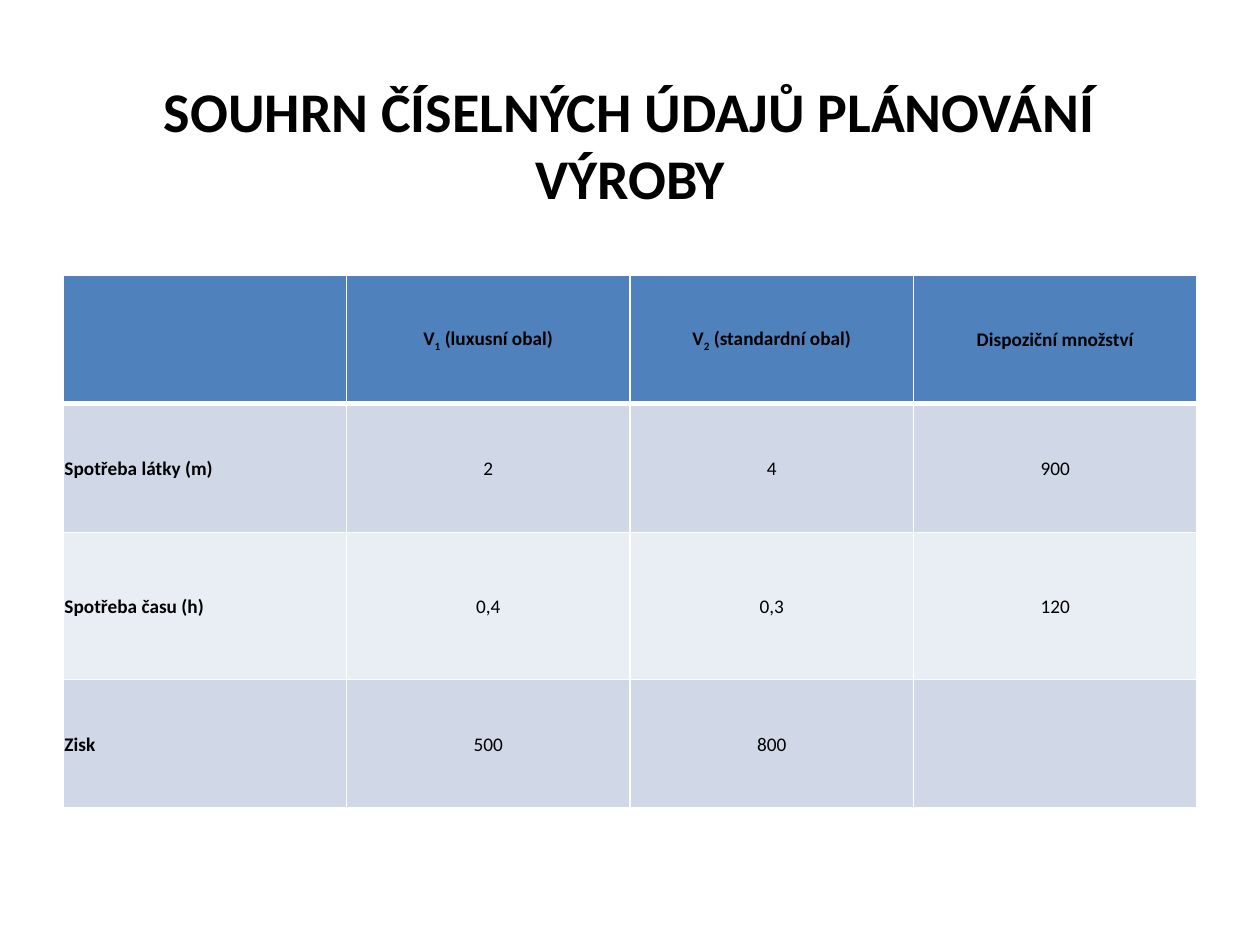
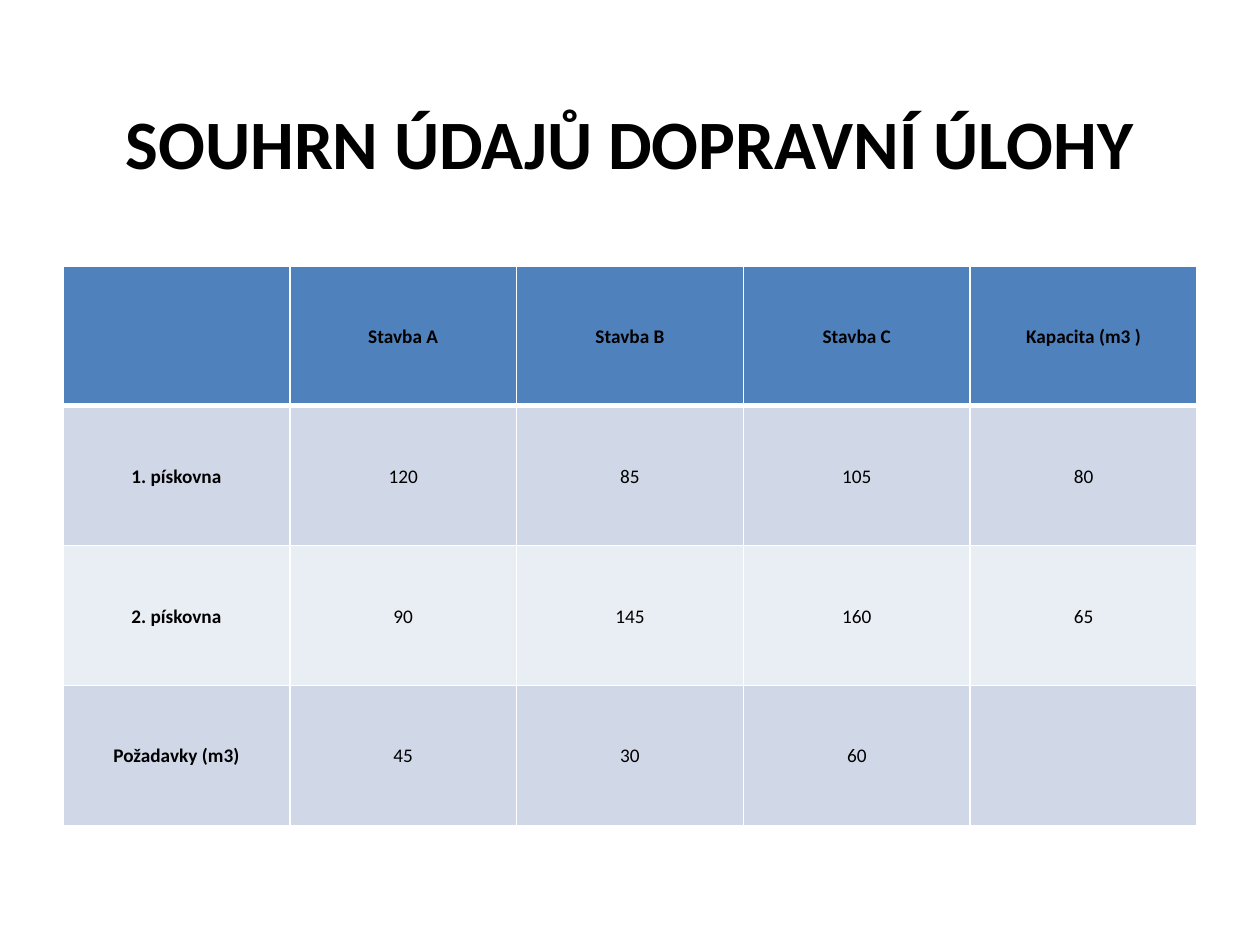
from dataclasses import dataclass
from lxml.etree import SubElement
from pptx import Presentation
from pptx.dml.color import RGBColor
from pptx.enum.text import MSO_ANCHOR, PP_ALIGN
from pptx.oxml.ns import qn
from pptx.util import Cm, Pt


@dataclass(frozen=True)
class Theme:
    font: str = "Calibri"
    ink: str = "000000"
    rule: str = "FFFFFF"
    head: str = "4F81BD"
    bands: tuple = ("D0D8E8", "E9EDF4")
    body: float = 11
    thin: float = 1
    thick: float = 3
    left: float = 1.27
    width: float = 22.86


THEME = Theme()

PLAN = [
    ["", ["V", "1", " (luxusní obal)"], ["V", "2", " (standardní obal)"],
     "Dispoziční množství"],
    ["Spotřeba látky (m)", "2", "4", "900"],
    ["Spotřeba času (h)", "0,4", "0,3", "120"],
    ["Zisk", "500", "800", ""],
]

FREIGHT = [
    ["", "Stavba A", "Stavba B", "Stavba C", "Kapacita (m3 )"],
    ["1. pískovna", "120", "85", "105", "80"],
    ["2. pískovna", "90", "145", "160", "65"],
    ["Požadavky (m3)", "45", "30", "60", ""],
]


def assign(item, values):
    for name, value in values.items():
        setattr(item, name, value)


def write(frame, parts, size, bold, align):
    line = frame.paragraphs[0]
    line.alignment = align
    for place, part in enumerate(parts):
        run = line.add_run()
        run.text = part
        assign(run.font, {"name": THEME.font, "size": Pt(size), "bold": bold})
        run.font.color.rgb = RGBColor.from_string(THEME.ink)
        if place % 2:
            run.font._element.set("baseline", "-25000")


def add_title(slide, text, size, top, height):
    box = slide.shapes.add_textbox(
        Cm(THEME.left), Cm(top), Cm(THEME.width), Cm(height))
    frame = box.text_frame
    assign(frame, {"word_wrap": True, "vertical_anchor": MSO_ANCHOR.MIDDLE})
    write(frame, [text], size, True, PP_ALIGN.CENTER)


def add_rules(cell, row):
    widths = {
        "L": THEME.thin,
        "R": THEME.thin,
        "T": THEME.thick if row == 1 else THEME.thin,
        "B": THEME.thick if row == 0 else THEME.thin,
    }
    props = cell._tc.get_or_add_tcPr()
    for side, width in widths.items():
        line = SubElement(props, qn(f"a:ln{side}"), w=str(Pt(width)))
        fill = SubElement(line, qn("a:solidFill"))
        SubElement(fill, qn("a:srgbClr"), val=THEME.rule)


def style_cell(cell, row):
    assign(cell, {
        "margin_left": Cm(0.03), "margin_right": Cm(0.03),
        "margin_top": Cm(0.03), "margin_bottom": 0,
        "vertical_anchor": MSO_ANCHOR.MIDDLE,
    })
    add_rules(cell, row)
    cell.fill.solid()
    shade = THEME.bands[(row - 1) % 2] if row else THEME.head
    cell.fill.fore_color.rgb = RGBColor.from_string(shade)


def add_grid(slide, data, top, heights, label):
    count = len(data[0])
    grid = slide.shapes.add_table(
        len(data), count, Cm(THEME.left), Cm(top),
        Cm(THEME.width), Cm(sum(heights))).table
    for column in grid.columns:
        column.width = Cm(THEME.width / count)
    for row, (height, values) in enumerate(zip(heights, data)):
        grid.rows[row].height = Cm(height)
        for col, value in enumerate(values):
            cell = grid.cell(row, col)
            style_cell(cell, row)
            if value:
                parts = [value] if isinstance(value, str) else value
                align = PP_ALIGN.CENTER if col else label
                bold = row == 0 or col == 0
                write(cell.text_frame, parts, THEME.body, bold, align)


def main():
    deck = Presentation()
    assign(deck, {"slide_width": Cm(25.4), "slide_height": Cm(19.05)})
    blank = deck.slide_layouts[6]

    slide = deck.slides.add_slide(blank)
    add_title(slide, "SOUHRN ČÍSELNÝCH ÚDAJŮ PLÁNOVÁNÍ VÝROBY", 32, 1.85, 2.08)
    add_grid(slide, PLAN, 5.55, [2.59, 2.59, 2.97, 2.59], PP_ALIGN.LEFT)

    slide = deck.slides.add_slide(blank)
    add_title(slide, "SOUHRN ÚDAJŮ DOPRAVNÍ ÚLOHY", 39.6, 1.78, 2.16)
    add_grid(slide, FREIGHT, 5.36, [2.82] * 4, PP_ALIGN.CENTER)

    deck.save("out.pptx")


if __name__ == "__main__":
    main()
